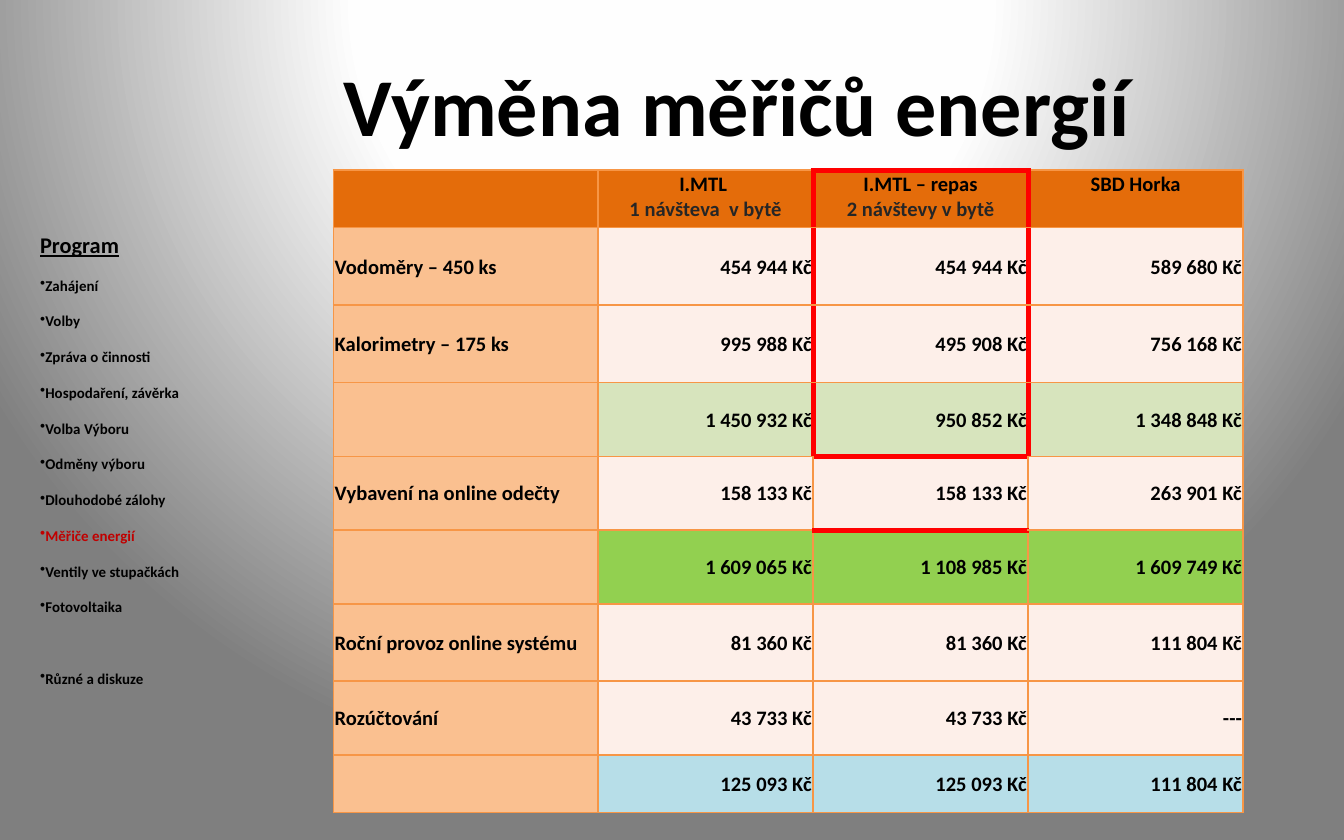
from lxml.etree import SubElement
from pptx import Presentation
from pptx.dml.color import RGBColor
from pptx.enum.text import MSO_ANCHOR, MSO_AUTO_SIZE, PP_ALIGN
from pptx.oxml import parse_xml
from pptx.oxml.ns import nsdecls, qn
from pptx.util import Pt

COLORS = {
    "text": "000000",
    "muted": "262626",
    "current": "C00000",
    "header": "E46C0A",
    "label": "FAC090",
    "value": "FDEFE9",
    "subtotal": "D7E4BD",
    "total": "92D050",
    "yearly": "B7DEE8",
    "grid": "F79646",
    "highlight": "FF0000",
}
BACKGROUND_STOPS = [(0, "FFFFFF"), (40, "FEFEFE"), (100, "7F7F7F")]

AGENDA = [
    "Zahájení", "Volby", "Zpráva o činnosti", "Hospodaření, závěrka",
    "Volba Výboru", "Odměny výboru", "Dlouhodobé zálohy", "Měřiče energií",
    "Ventily ve stupačkách", "Fotovoltaika", "Různé a diskuze",
]
CURRENT_TOPIC = "Měřiče energií"
LAST_TOPIC = "Různé a diskuze"

OFFERS = [
    ("I.MTL ", "1 návšteva  v bytě"),
    ("I.MTL – repas", "2 návštevy v bytě"),
    ("SBD Horka",),
]
COSTS = [
    (41.5, "value", "Vodoměry – 450 ks", "454 944 Kč", "454 944 Kč", "589 680 Kč"),
    (41.5, "value", "Kalorimetry – 175 ks", "995 988 Kč", "495 908 Kč", "756 168 Kč"),
    (39.5, "subtotal", "", "1 450 932 Kč", "950 852 Kč", "1 348 848 Kč"),
    (39.5, "value", "Vybavení na online odečty", "158 133 Kč", "158 133 Kč", "263 901 Kč"),
    (39.5, "total", "", "1 609 065 Kč", "1 108 985 Kč", "1 609 749 Kč"),
    (41.5, "value", "Roční provoz online systému", "81 360 Kč", "81 360 Kč", "111 804 Kč"),
    (39.5, "value", "Rozúčtování", "43 733 Kč", "43 733 Kč", "---"),
    (30.8, "yearly", "", "125 093 Kč", "125 093 Kč", "111 804 Kč"),
]
HEADER_HEIGHT = 30.8
COLUMN_WIDTHS = [141.8, 115.2, 115.2, 115.2]


def highlighted_sides(row, column):
    sides = set()
    if row < 4 and column in (2, 3):
        sides.add("L")
    if row < 4 and column in (1, 2):
        sides.add("R")
    if column == 2 and row in (0, 4, 5):
        sides.add("T")
    if column == 2 and row in (3, 4):
        sides.add("B")
    return sides


class SlideBuilder:
    font = "Calibri"

    def __init__(self, slide):
        self.slide = slide

    def background(self, stops):
        self.slide.background.fill.solid()
        properties = self.slide.element.find(".//" + qn("p:bgPr"))
        marks = "".join(
            f'<a:gs pos="{position * 1000}"><a:srgbClr val="{color}"/></a:gs>'
            for position, color in stops
        )
        gradient = parse_xml(
            f'<a:gradFill {nsdecls("a")} rotWithShape="1"><a:gsLst>{marks}</a:gsLst>'
            '<a:path path="circle"><a:fillToRect l="50000" t="-80000" r="50000" b="180000"/>'
            "</a:path></a:gradFill>"
        )
        properties.replace(properties[0], gradient)

    def add_text(self, paragraph, text, size, color="text", align=PP_ALIGN.LEFT, underline=False):
        paragraph.alignment = align
        run = paragraph.add_run()
        run.text = text
        style = {"name": self.font, "size": Pt(size), "bold": True, "underline": underline}
        for attribute, value in style.items():
            setattr(run.font, attribute, value)
        run.font.color.rgb = RGBColor.from_string(COLORS[color])

    def title(self, text, left, top, width, height):
        heading = self.slide.shapes.title
        place = {"left": left, "top": top, "width": width, "height": height}
        for attribute, value in place.items():
            setattr(heading, attribute, Pt(value))
        heading.text_frame.vertical_anchor = MSO_ANCHOR.MIDDLE
        self.add_text(heading.text_frame.paragraphs[0], text, 44, align=PP_ALIGN.CENTER)

    def agenda(self, heading, topics, left, top, width, height):
        box = self.slide.shapes.add_textbox(Pt(left), Pt(top), Pt(width), Pt(height))
        frame = box.text_frame
        frame.word_wrap = True
        frame.auto_size = MSO_AUTO_SIZE.SHAPE_TO_FIT_TEXT
        frame.paragraphs[0].line_spacing = 2.0
        self.add_text(frame.paragraphs[0], heading, 12, underline=True)
        for topic in topics:
            paragraph = frame.add_paragraph()
            paragraph.line_spacing = 2.0
            if topic == LAST_TOPIC:
                paragraph.space_before = Pt(19.2)
            SubElement(paragraph._p.get_or_add_pPr(), qn("a:buChar"), char="•")
            self.add_text(paragraph, topic, 8, "current" if topic == CURRENT_TOPIC else "text")

    def borders(self, cell, red_sides):
        properties = cell._tc.get_or_add_tcPr()
        for side in "LRTB":
            color, width = ("highlight", 3) if side in red_sides else ("grid", 1)
            line = SubElement(properties, qn(f"a:ln{side}"), w=str(Pt(width)))
            fill = SubElement(line, qn("a:solidFill"))
            SubElement(fill, qn("a:srgbClr"), val=COLORS[color])

    def cell(self, cell, fill, lines, align, anchor, red_sides):
        self.borders(cell, red_sides)
        cell.fill.solid()
        cell.fill.fore_color.rgb = RGBColor.from_string(COLORS[fill])
        layout = {
            "margin_left": Pt(0.72), "margin_right": Pt(0.72),
            "margin_top": Pt(0.72), "margin_bottom": Pt(0),
            "vertical_anchor": anchor,
        }
        for attribute, value in layout.items():
            setattr(cell, attribute, value)
        for index, text in enumerate(lines):
            frame = cell.text_frame
            paragraph = frame.add_paragraph() if index else frame.paragraphs[0]
            self.add_text(paragraph, text, 11, "muted" if index else "text", align)

    def cost_table(self, offers, costs, left, top):
        heights = [HEADER_HEIGHT] + [cost[0] for cost in costs]
        table = self.slide.shapes.add_table(
            len(heights), len(COLUMN_WIDTHS), Pt(left), Pt(top),
            Pt(sum(COLUMN_WIDTHS)), Pt(sum(heights)),
        ).table
        for column, width in zip(table.columns, COLUMN_WIDTHS):
            column.width = Pt(width)
        for row, height in zip(table.rows, heights):
            row.height = Pt(height)
        for column, lines in enumerate([()] + offers):
            self.cell(table.cell(0, column), "header", lines, PP_ALIGN.CENTER,
                      MSO_ANCHOR.TOP, highlighted_sides(0, column))
        for row, (_, tint, *entries) in enumerate(costs, 1):
            for column, entry in enumerate(entries):
                self.cell(table.cell(row, column), tint if column else "label",
                          [entry] if entry else [],
                          PP_ALIGN.RIGHT if column else PP_ALIGN.LEFT,
                          MSO_ANCHOR.MIDDLE, highlighted_sides(row, column))


def main():
    presentation = Presentation()
    presentation.slide_width, presentation.slide_height = Pt(720), Pt(450)
    builder = SlideBuilder(presentation.slides.add_slide(presentation.slide_layouts[5]))
    builder.background(BACKGROUND_STOPS)
    builder.title("Výměna měřičů energií ", 116, 18, 568, 75)
    builder.agenda("Program", AGENDA, 14.4, 106, 90.7, 286)
    builder.cost_table(OFFERS, COSTS, 178.6, 91.2)
    presentation.save("out.pptx")


if __name__ == "__main__":
    main()
